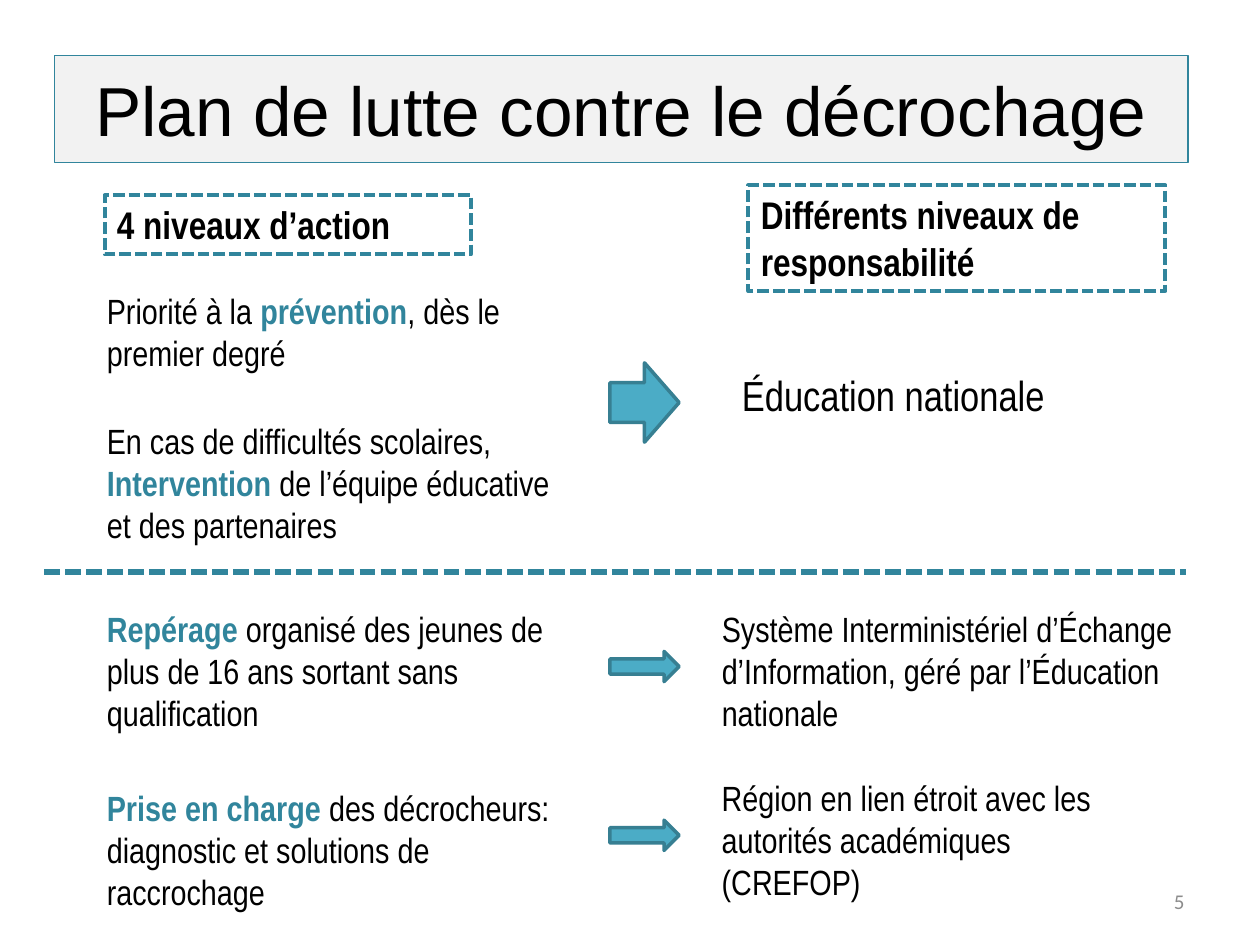
"""Build the slide on the plan against school dropout."""
from dataclasses import dataclass
from typing import NamedTuple

from lxml.etree import SubElement
from pptx import Presentation
from pptx.dml.color import RGBColor
from pptx.enum.dml import MSO_LINE
from pptx.enum.shapes import MSO_CONNECTOR, MSO_SHAPE
from pptx.enum.text import MSO_ANCHOR, MSO_AUTO_SIZE, PP_ALIGN
from pptx.oxml.ns import qn
from pptx.util import Inches, Pt

COLORS = {
    "text": "000000",
    "accent": "31859C",
    "banner": "F2F2F2",
    "arrow": "4BACC6",
    "arrow_edge": "377F92",
    "number": "8C8C8C",
}
LEFT, RIGHT = 0.75, 5.63
ARROW_LEFT, ARROW_WIDTH = 4.84, 0.55


class Span(NamedTuple):
    text: str
    color: str = "text"
    bold: bool = False


def key(text: str) -> Span:
    return Span(text, "accent", True)


@dataclass
class Block:
    left: float
    top: float
    width: float
    height: float
    spans: list[Span]
    size: float = 20
    font: str = "Arial Narrow"
    align: PP_ALIGN = PP_ALIGN.LEFT
    anchor: MSO_ANCHOR = MSO_ANCHOR.TOP

    def box(self) -> list[int]:
        return [Inches(v) for v in (self.left, self.top, self.width, self.height)]


class Arrow(NamedTuple):
    top: float
    height: float


TITLE = Block(0.43, 0.44, 9, 0.85, [Span("Plan de lutte contre le décrochage")],
              39.6, "Arial", PP_ALIGN.CENTER, MSO_ANCHOR.MIDDLE)
HEADINGS = [
    Block(0.83, 1.55, 2.91, 0.47, [Span("4 niveaux d’action", bold=True)], 22),
    Block(5.94, 1.47, 3.31, 0.84,
          [Span("Différents niveaux de responsabilité", bold=True)], 22),
]
TEXTS = [
    Block(LEFT, 2.25, 3.86, 0.77,
          [Span("Priorité à la "), key("prévention"), Span(", dès le premier degré")]),
    Block(LEFT, 3.28, 3.86, 1.11,
          [Span("En cas de difficultés scolaires, "), key("Intervention"),
           Span(" de l’équipe éducative et des partenaires")]),
    Block(LEFT, 4.77, 3.94, 1.11,
          [key("Repérage"),
           Span(" organisé des jeunes de plus de 16 ans sortant sans qualification")]),
    Block(LEFT, 6.19, 3.94, 1.11,
          [key("Prise en charge "),
           Span("des décrocheurs: diagnostic et solutions de raccrochage")]),
    Block(5.79, 2.88, 3.5, 0.5, [Span("Éducation nationale")], 24),
    Block(RIGHT, 4.77, 4.02, 1.11,
          [Span("Système Interministériel d’Échange d’Information, "
                "géré par l’Éducation nationale")]),
    Block(RIGHT, 6.11, 3.5, 1.11,
          [Span("Région en lien étroit avec les autorités académiques (CREFOP)")]),
    Block(7.17, 6.95, 2.33, 0.4, [Span("5", "number")], 12, "Calibri",
          PP_ALIGN.RIGHT, MSO_ANCHOR.MIDDLE),
]
ARROWS = [Arrow(2.88, 0.63), Arrow(5.17, 0.24), Arrow(6.51, 0.24)]


def rgb(name: str) -> RGBColor:
    return RGBColor.from_string(COLORS[name])


def paint(shape, fill: str | None, line: str, width: float) -> None:
    if fill:
        shape.fill.solid()
        shape.fill.fore_color.rgb = rgb(fill)
    else:
        shape.fill.background()
    shape.line.color.rgb = rgb(line)
    shape.line.width = Pt(width)


def write(shape, block: Block) -> None:
    frame = shape.text_frame
    frame.word_wrap = True
    frame.auto_size = MSO_AUTO_SIZE.NONE
    frame.vertical_anchor = block.anchor
    paragraph = frame.paragraphs[0]
    paragraph.alignment = block.align
    for span in block.spans:
        run = paragraph.add_run()
        run.text = span.text
        run.font.name = block.font
        run.font.size = Pt(block.size)
        run.font.bold = span.bold
        run.font.color.rgb = rgb(span.color)


def add_title(slide, block: Block) -> None:
    title = slide.shapes.title
    title.left, title.top, title.width, title.height = block.box()
    paint(title, "banner", "accent", 0.75)
    write(title, block)


def add_heading(slide, block: Block) -> None:
    frame = slide.shapes.add_shape(MSO_SHAPE.RECTANGLE, *block.box())
    frame.shadow.inherit = False
    paint(frame, None, "accent", 2.25)
    frame.line.dash_style = MSO_LINE.SQUARE_DOT
    write(frame, block)


def add_arrow(slide, arrow: Arrow) -> None:
    shape = slide.shapes.add_shape(
        MSO_SHAPE.RIGHT_ARROW, Inches(ARROW_LEFT), Inches(arrow.top),
        Inches(ARROW_WIDTH), Inches(arrow.height))
    shape.shadow.inherit = False
    paint(shape, "arrow", "arrow_edge", 2)


def add_divider(slide, left: float, right: float, y: float) -> None:
    divider = slide.shapes.add_connector(
        MSO_CONNECTOR.STRAIGHT, Inches(left), Inches(y), Inches(right), Inches(y))
    divider.line.color.rgb = rgb("accent")
    divider.line.width = Pt(3)
    divider.line.dash_style = MSO_LINE.SQUARE_DOT
    SubElement(divider._element.spPr, qn("a:effectLst"))


def main() -> None:
    deck = Presentation()
    deck.slide_width, deck.slide_height = Inches(10), Inches(7.5)
    slide = deck.slides.add_slide(deck.slide_layouts[5])
    add_title(slide, TITLE)
    for heading in HEADINGS:
        add_heading(slide, heading)
    for block in TEXTS:
        write(slide.shapes.add_textbox(*block.box()), block)
    for arrow in ARROWS:
        add_arrow(slide, arrow)
    add_divider(slide, 0.35, 9.41, 4.54)
    deck.save("out.pptx")


if __name__ == "__main__":
    main()
